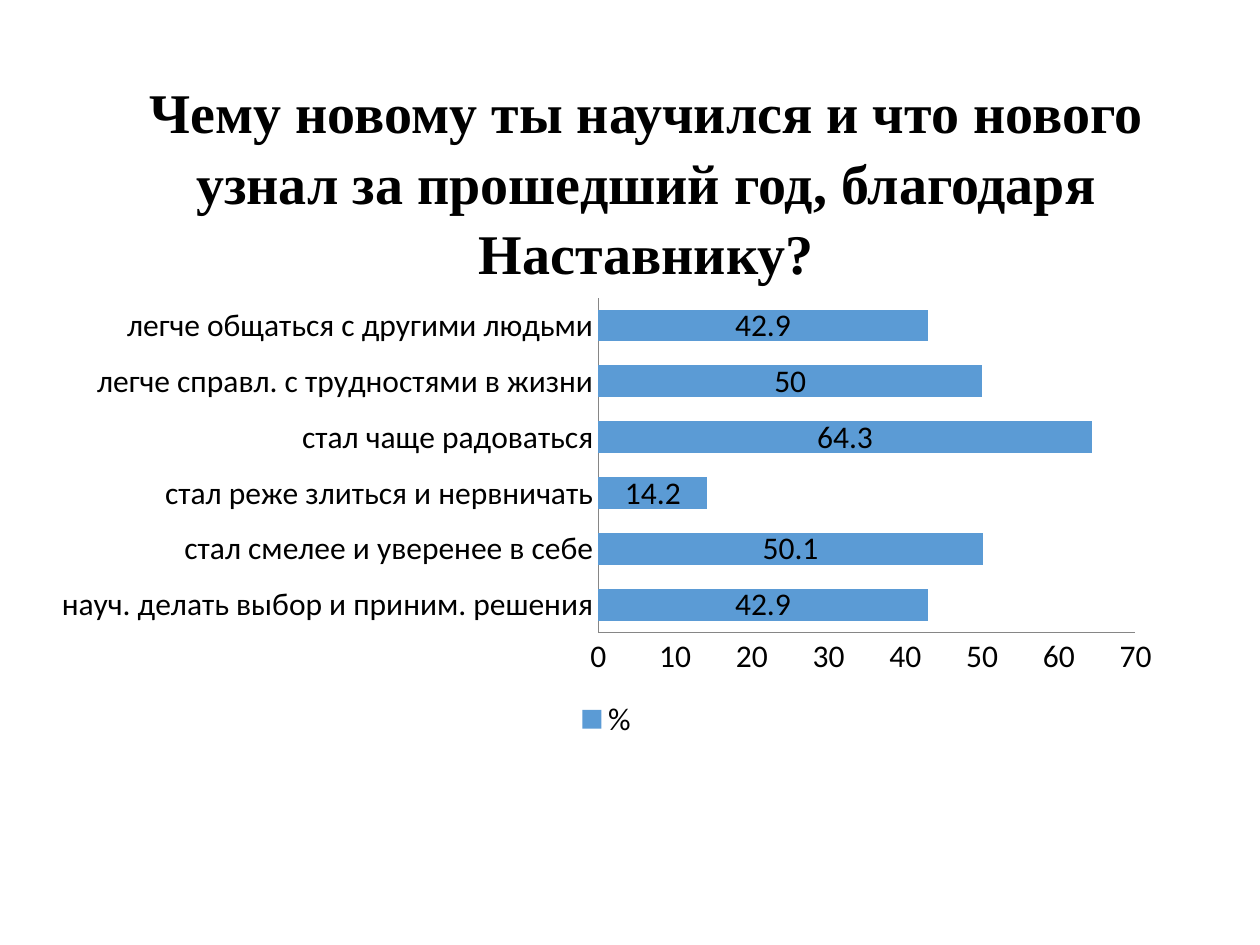
import pptx
import pptx.chart.data
import pptx.dml.color
import pptx.enum.chart
import pptx.enum.text
import pptx.util
from pptx.util import Inches

COLORS = {"text": "000000", "bar": "5B9BD5", "axis": "868686"}
ANSWERS = [
    ("науч. делать выбор и приним. решения", 42.9),
    ("стал смелее и уверенее в себе", 50.1),
    ("стал реже злиться и нервничать", 14.2),
    ("стал чаще радоваться", 64.3),
    ("легче справл. с трудностями в жизни", 50),
    ("легче общаться с другими людьми", 42.9),
]


def color(name):
    return pptx.dml.color.RGBColor.from_string(COLORS[name])


def style_font(font, name, size, bold=False):
    font.name = name
    font.size = pptx.util.Pt(size)
    font.bold = bold
    font.color.rgb = color("text")


def add_question(slide, left, top, width, height):
    question = slide.shapes.add_textbox(left, top, width, height)
    frame = question.text_frame
    frame.word_wrap = True
    frame.auto_size = pptx.enum.text.MSO_AUTO_SIZE.SHAPE_TO_FIT_TEXT
    frame.vertical_anchor = pptx.enum.text.MSO_ANCHOR.MIDDLE
    paragraph = frame.paragraphs[0]
    paragraph.text = ("Чему новому ты научился и что нового узнал "
                      "за прошедший год, благодаря Наставнику?")
    paragraph.alignment = pptx.enum.text.PP_ALIGN.CENTER
    paragraph.line_spacing = 1.05
    style_font(paragraph.font, "Times New Roman", 32, True)


def add_answers(slide, left, top, width, height):
    data = pptx.chart.data.CategoryChartData()
    data.categories = [answer for answer, _ in ANSWERS]
    data.add_series("%", [share for _, share in ANSWERS])
    chart = slide.shapes.add_chart(
        pptx.enum.chart.XL_CHART_TYPE.BAR_STACKED,
        left, top, width, height, data).chart
    style_font(chart.font, "Calibri", 18)
    chart.has_title = False
    chart.has_legend = True
    chart.legend.position = pptx.enum.chart.XL_LEGEND_POSITION.BOTTOM
    chart.legend.include_in_layout = False

    for axis in (chart.category_axis, chart.value_axis):
        axis.has_major_gridlines = False
        axis.major_tick_mark = pptx.enum.chart.XL_TICK_MARK.NONE
        axis.minor_tick_mark = pptx.enum.chart.XL_TICK_MARK.NONE
        axis.format.line.color.rgb = color("axis")
        axis.format.line.width = pptx.util.Pt(0.75)
    chart.value_axis.minimum_scale = 0
    chart.value_axis.maximum_scale = 70
    chart.value_axis.major_unit = 10

    plot = chart.plots[0]
    plot.gap_width = 75
    plot.overlap = 100
    plot.vary_by_categories = False
    shares = plot.series[0]
    shares.format.fill.solid()
    shares.format.fill.fore_color.rgb = color("bar")
    shares.data_labels.show_value = True
    style_font(shares.data_labels.font, "Calibri", 18)


def main():
    deck = pptx.Presentation()
    deck.slide_width, deck.slide_height = Inches(10), Inches(7.5)
    slide = deck.slides.add_slide(deck.slide_layouts[6])
    add_question(slide, Inches(0.66), Inches(0.57), Inches(8.94), Inches(1.72))
    add_answers(slide, Inches(0.31), Inches(2.29), Inches(9.01), Inches(3.62))
    deck.save("out.pptx")


if __name__ == "__main__":
    main()
